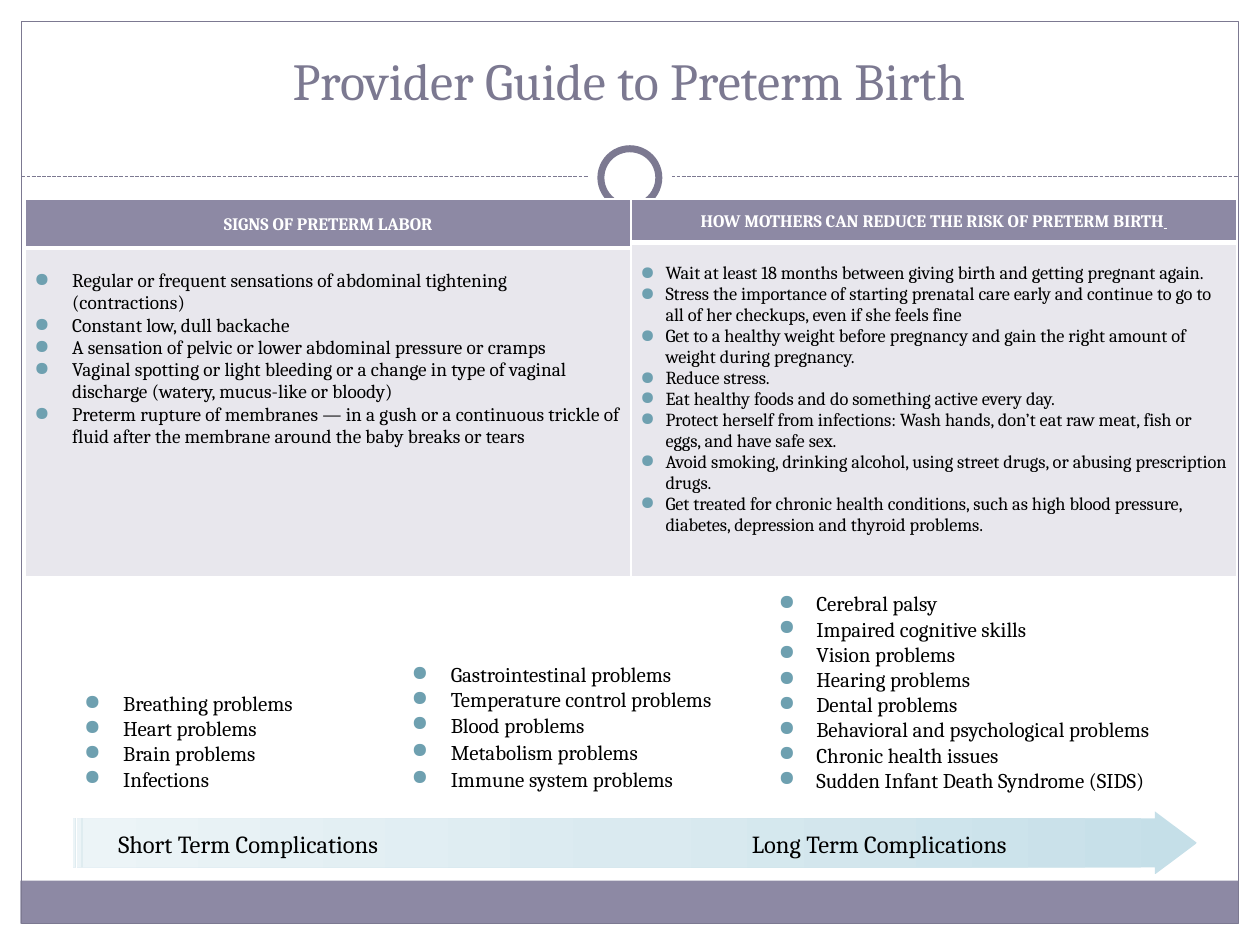
"""Build a one-slide provider guide to preterm birth."""
import copy

import pptx
import pptx.dml.color
import pptx.enum.dml
import pptx.enum.shapes
import pptx.enum.text
import pptx.oxml
import pptx.oxml.ns
import pptx.util

Pt = pptx.util.Pt
SHAPE = pptx.enum.shapes.MSO_SHAPE
ANCHOR = pptx.enum.text.MSO_ANCHOR
ALIGN = pptx.enum.text.PP_ALIGN
FONT = "Cambria"
COLORS = {
    "white": "FFFFFF", "black": "000000", "purple": "8D89A4",
    "outline": "7C7991", "pale": "E8E7ED", "bullet": "6EA0B0",
    "arrow_dark": "C5DFE8", "arrow_mid": "DAEAF0", "arrow_light": "ECF4F7",
}
SIGNS = [
    "Regular or frequent sensations of abdominal tightening (contractions)",
    "Constant low, dull backache",
    "A sensation of pelvic or lower abdominal pressure or cramps",
    "Vaginal spotting or light bleeding or a change in type of vaginal discharge (watery, mucus-like or bloody)",
    "Preterm rupture of membranes — in a gush or a continuous trickle of fluid after the membrane around the baby breaks or tears",
]
ADVICE = [
    "Wait at least 18 months between giving birth and getting pregnant again.",
    "Stress the importance of starting prenatal care early and continue to go to all of her checkups, even if she feels fine",
    "Get to a healthy weight before pregnancy and gain the right amount of weight during pregnancy.",
    "Reduce stress.",
    "Eat healthy foods and do something active every day.",
    "Protect herself from infections: Wash hands, don’t eat raw meat, fish or eggs, and have safe sex.",
    "Avoid smoking, drinking alcohol, using street drugs, or abusing prescription drugs.",
    "Get treated for chronic health conditions, such as high blood pressure, diabetes, depression and thyroid problems.",
]
SHORT_TERM = ["Breathing problems", "Heart problems", "Brain problems", "Infections"]
MID_TERM = ["Gastrointestinal problems", "Temperature control problems", "Blood problems",
            "Metabolism problems", "Immune system problems"]
LONG_TERM = ["Cerebral palsy", "Impaired cognitive skills", "Vision problems",
             "Hearing problems", "Dental problems", "Behavioral and psychological problems",
             "Chronic health issues", "Sudden Infant Death Syndrome (SIDS)"]


def rgb(name):
    return pptx.dml.color.RGBColor.from_string(COLORS[name])


def xml(body):
    ns = pptx.oxml.ns.nsdecls("a")
    return pptx.oxml.parse_xml(body.replace(">", f" {ns}>", 1))


def add_run(p, text, size, color="black", bold=False):
    r = p.add_run()
    r.text = text
    r.font.name, r.font.size, r.font.bold = FONT, Pt(size), bold
    r.font.color.rgb = rgb(color)
    return r


def add_bullets(tf, items, size, indent, loose=()):
    for i, item in enumerate(items):
        p = tf.add_paragraph() if i else tf.paragraphs[0]
        if i in loose:
            p.line_spacing = 1.07
        pPr = p._p.get_or_add_pPr()
        pPr.set("marL", str(Pt(indent)))
        pPr.set("indent", str(-Pt(indent)))
        pPr.append(xml(f'<a:buClr><a:srgbClr val="{COLORS["bullet"]}"/></a:buClr>'))
        pPr.append(xml('<a:buChar char="●"></a:buChar>'))
        add_run(p, item, size)


def add_shape(shapes, kind, box, fill=None, line=None, width=0.75):
    sp = shapes.add_shape(kind, *map(Pt, box))
    sp.shadow.inherit = False
    if fill:
        sp.fill.solid()
        sp.fill.fore_color.rgb = rgb(fill)
    else:
        sp.fill.background()
    if line:
        sp.line.color.rgb = rgb(line)
        sp.line.width = Pt(width)
    else:
        sp.line.fill.background()
    return sp


def add_text(shapes, box, wrap=True, anchor=ANCHOR.TOP):
    tf = shapes.add_textbox(*map(Pt, box)).text_frame
    tf.word_wrap = wrap
    tf.auto_size = pptx.enum.text.MSO_AUTO_SIZE.SHAPE_TO_FIT_TEXT
    tf.vertical_anchor = anchor
    return tf


def add_divider(s):
    ln = s.shapes.add_connector(pptx.enum.shapes.MSO_CONNECTOR.STRAIGHT,
                                Pt(12.24), Pt(100.8), Pt(707.76), Pt(100.8))
    ln.line.color.rgb = rgb("outline")
    ln.line.width = Pt(0.75)
    ln.line.dash_style = pptx.enum.dml.MSO_LINE.SQUARE_DOT
    ln.element.spPr.append(xml("<a:effectLst></a:effectLst>"))


def add_frame(s):
    add_shape(s.shapes, SHAPE.RECTANGLE, (11.7, 503.3, 695.7, 24.5), "purple")
    add_shape(s.shapes, SHAPE.RECTANGLE, (12.24, 12.24, 695.52, 515.52), line="outline")
    add_divider(s)
    add_shape(s.shapes, SHAPE.OVAL, (336, 77.8, 48, 48), "white")
    add_shape(s.shapes, SHAPE.OVAL, (343.4, 85, 33.1, 33.1), "white", "outline", 4)


def add_title(s, text):
    sp = s.shapes.title
    sp.left, sp.top, sp.width, sp.height = map(Pt, (23.76, 41.76, 671.76, 59.76))
    tf = sp.text_frame
    tf.vertical_anchor = ANCHOR.BOTTOM
    tf.margin_bottom = Pt(38)
    p = tf.paragraphs[0]
    p.alignment = ALIGN.CENTER
    add_run(p, text, 29.7, "outline")


def style_cell(cell, fill, widths):
    cell.fill.solid()
    cell.fill.fore_color.rgb = rgb(fill)
    cell.margin_left = cell.margin_right = Pt(5)
    cell.margin_top = cell.margin_bottom = 0
    tcPr = cell._tc.get_or_add_tcPr()
    for i, (side, width) in enumerate(zip("LRTB", widths)):
        tcPr.insert(i, xml(f'<a:ln{side} w="{Pt(width)}"><a:solidFill>'
                           f'<a:srgbClr val="{COLORS["white"]}"/></a:solidFill></a:ln{side}>'))


def add_panel(s, left, header_height, heading, items, size, indent, gap):
    table = s.shapes.add_table(2, 1, Pt(left), Pt(113.8), Pt(345.6), Pt(216)).table
    table.rows[0].height = Pt(header_height)
    table.rows[1].height = Pt(216 - header_height)
    head, body = table.cell(0, 0), table.cell(1, 0)
    style_cell(head, "purple", (1, 1, 1, 3))
    style_cell(body, "pale", (1, 1, 3, 1))
    head.vertical_anchor = ANCHOR.MIDDLE
    p = head.text_frame.paragraphs[0]
    p.alignment, p.line_spacing = ALIGN.CENTER, 1.07
    add_run(p, heading, 10, "white", True)
    body.margin_top = Pt(gap)
    add_bullets(body.text_frame, items, size, indent)
    return p


def add_arrow(s):
    shapes = s.shapes.add_group_shape().shapes
    sp = add_shape(shapes, SHAPE.STRIPED_RIGHT_ARROW, (41.8, 463.7, 642.2, 36))
    sp.adjustments[0], sp.adjustments[1] = 0.778, 0.667
    sp.fill.gradient()
    sp.fill.gradient_angle = 180
    stops = sp.element.spPr.find(".//" + pptx.oxml.ns.qn("a:gsLst"))
    stops.insert(1, copy.deepcopy(stops[0]))
    names = ("arrow_dark", "arrow_mid", "arrow_light")
    for i, (stop, name) in enumerate(zip(sp.fill.gradient_stops, names)):
        stop.position = i / 2
        stop.color.rgb = rgb(name)
    for left, width, text in ((60.5, 186.5, "Short Term Complications"),
                              (422.6, 183.6, "Long Term Complications")):
        tf = add_text(shapes, (left, 470.2, width, 24.5), wrap=False)
        add_run(tf.paragraphs[0], text, 14)


def main():
    prs = pptx.Presentation()
    prs.slide_width, prs.slide_height = Pt(720), Pt(540)
    s = prs.slides.add_slide(prs.slide_layouts[5])
    add_title(s, "Provider Guide to Preterm Birth")
    add_frame(s)
    add_panel(s, 14.6, 28, "SIGNS OF PRETERM LABOR", SIGNS, 11, 21.6, 12.6)
    p = add_panel(s, 360.9, 24.7, "HOW MOTHERS CAN REDUCE THE RISK OF PRETERM BIRTH",
                  ADVICE, 10.5, 14.4, 12)
    add_run(p, " ", 10, "white", True).font.underline = True
    add_arrow(s)
    for box, items, indent, loose in (
            ((41, 390.2, 168.5, 65.5), SHORT_TERM, 22.3, ()),
            ((437.8, 332.6, 257, 123.8), LONG_TERM, 21.6, ()),
            ((228.2, 375.1, 238.3, 80.6), MID_TERM, 22.3, (3, 4))):
        add_bullets(add_text(s.shapes, box, anchor=ANCHOR.BOTTOM), items, 12, indent, loose)
    prs.save("out.pptx")


if __name__ == "__main__":
    main()
